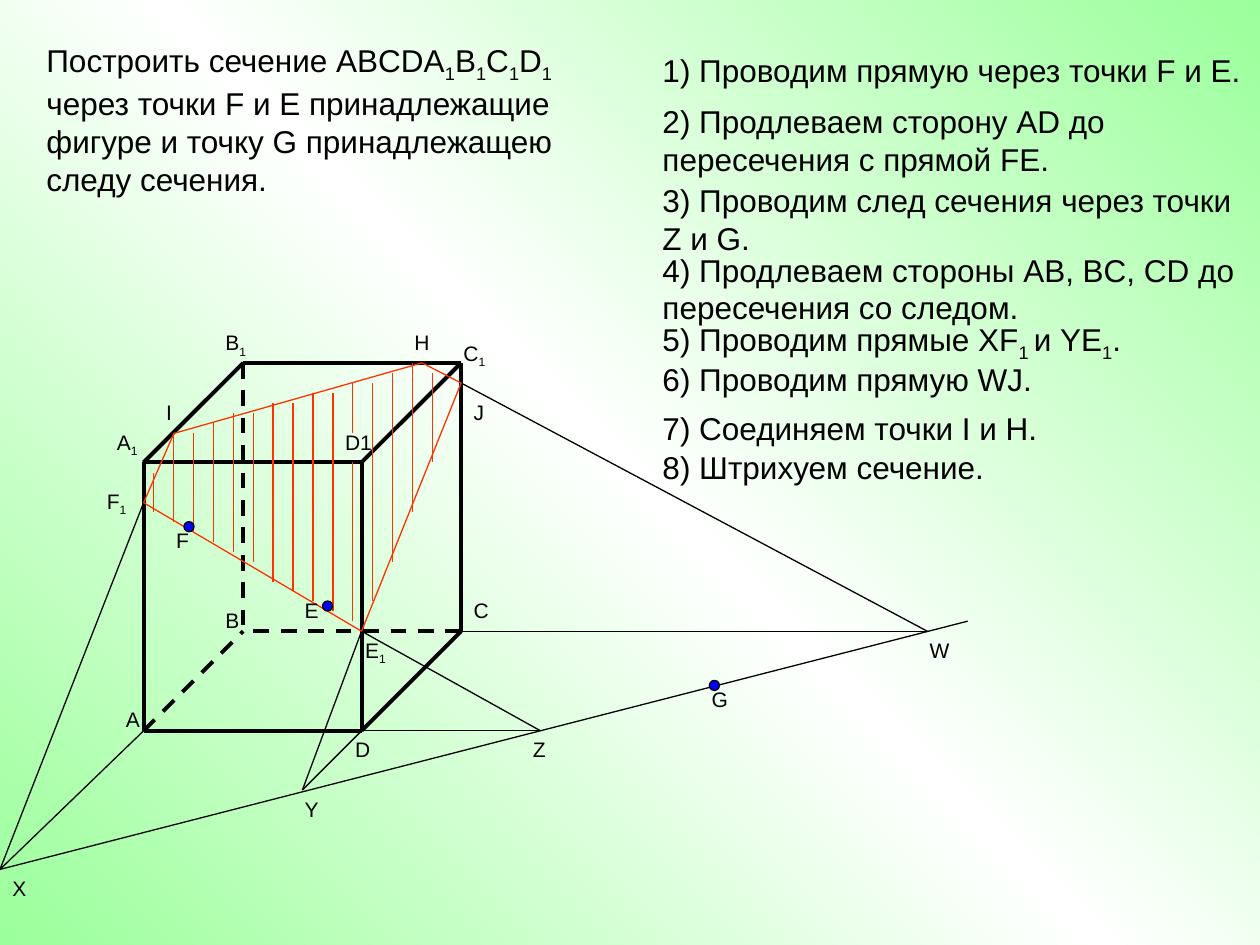
from copy import deepcopy
from dataclasses import dataclass
from typing import NamedTuple

from pptx import Presentation
from pptx.dml.color import RGBColor
from pptx.enum.dml import MSO_LINE
from pptx.enum.shapes import MSO_CONNECTOR, MSO_SHAPE
from pptx.enum.text import MSO_AUTO_SIZE
from pptx.oxml.ns import qn
from pptx.util import Inches, Pt
from lxml.etree import SubElement


@dataclass(frozen=True)
class Theme:
    font: str = "Arial"
    ink: str = "000000"
    section: str = "FF3300"
    dot: str = "0000FF"
    edge_stop: str = "9BFF9B"
    middle_stop: str = "FFFFFF"
    label_size: float = 12
    text_size: float = 18
    thick: float = 2.25
    thin: float = 0.75


class Point(NamedTuple):
    x: float
    y: float


class Pen(NamedTuple):
    color: str
    width: float
    dash: MSO_LINE | None = None


class TextBox(NamedTuple):
    text: str  # every second part between underscores is a subscript
    left: float
    top: float
    width: float
    height: float = 0.3


THEME = Theme()
SOLID = Pen(THEME.ink, THEME.thick)
HIDDEN = Pen(THEME.ink, THEME.thick, MSO_LINE.DASH)
THIN = Pen(THEME.ink, THEME.thin)
RED = Pen(THEME.section, THEME.thin)

POINTS = {
    # Cube vertices
    "A": Point(1.14, 5.8), "B": Point(1.93, 5.01),
    "C": Point(3.66, 5.01), "D": Point(2.87, 5.8),
    "A1": Point(1.14, 3.67), "B1": Point(1.93, 2.88),
    "C1": Point(3.66, 2.88), "D1": Point(2.87, 3.67),
    # Section vertices
    "F1": Point(1.14, 3.99), "E1": Point(2.87, 5.01), "J": Point(3.66, 3.04),
    "H": Point(3.35, 2.88), "I": Point(1.38, 3.44),
    # Points of the trace
    "X": Point(0, 6.9), "Y": Point(2.4, 6.27), "Z": Point(4.29, 5.8),
    "W": Point(7.36, 5.01), "trace end": Point(7.68, 4.93),
}

SEGMENTS = {
    SOLID: ["A A1", "D D1", "C C1", "D A", "D1 A1", "C1 B1", "A1 B1", "D C", "D1 C1"],
    HIDDEN: ["B1 B", "C B", "A B"],
    THIN: ["D Z", "D Y", "C W", "A X", "X F1", "Y E1", "W J", "E1 Z"],
    RED: ["F1 E1", "F1 I", "E1 J", "J H", "I H"],
}

DOTS = [Point(2.6, 4.81), Point(5.67, 5.44), Point(1.5, 4.18)]
DOT_SIZE = 0.08

# Top and bottom of each hatch line; None marks where the D1 label breaks it
HATCH_START, HATCH_STEP = 1.22, 0.158
HATCHES = [
    (3.75, 4.06), (3.44, 4.14), (3.44, 4.22), (3.36, 4.3), (3.28, 4.38),
    (3.28, 4.46), (3.2, 4.62), (3.2, 4.69), (3.12, 4.77), (3.12, 4.85),
    (3.04, 3.44, 3.67, 4.93), (3.04, 4.77), (2.96, 4.46), (2.88, 4.06), (2.96, 3.67),
]

LABELS = [
    TextBox("A", 0.9, 5.56, 0.32), TextBox("B", 1.69, 4.77, 0.31),
    TextBox("C", 3.66, 4.69, 0.31), TextBox("D", 2.72, 5.8, 0.31),
    TextBox("A_1", 0.83, 3.36, 0.47), TextBox("B_1", 1.69, 2.57, 0.55),
    TextBox("C_1", 3.58, 2.65, 0.47), TextBox("D1", 2.64, 3.36, 0.47),
    TextBox("F", 1.3, 4.14, 0.32), TextBox("E", 2.32, 4.69, 0.32),
    TextBox("G", 5.55, 5.4, 0.31), TextBox("F_1", 0.75, 3.83, 0.47),
    TextBox("X", 0, 6.9, 0.27), TextBox("Y", 2.32, 6.27, 0.31),
    TextBox("Z", 4.13, 5.8, 0.31), TextBox("E_1", 2.8, 5.01, 0.47),
    TextBox("H", 3.19, 2.57, 0.31), TextBox("W", 7.28, 5.01, 0.31),
    TextBox("J", 3.66, 3.12, 0.31), TextBox("I", 1.22, 3.12, 0.24),
]

TASK = TextBox(
    "Построить сечение ABCDA_1_B_1_C_1_D_1_ через точки F и E принадлежащие "
    "фигуре и точку G принадлежащею следу сечения.", 0.27, 0.28, 4.57, 1.3)

STEP_LEFT, STEP_WIDTH = 5.16, 4.84
STEPS = [
    (0.36, 0.4, "1) Проводим прямую через точки F и E."),
    (0.76, 0.7, "2) Продлеваем сторону AD до пересечения с прямой FE."),
    (1.39, 0.7, "3) Проводим след сечения через точки Z и G."),
    (1.94, 0.7, "4) Продлеваем стороны AB, BC, CD до пересечения со следом."),
    (2.49, 0.4, "5) Проводим прямые XF_1 _и YE_1_."),
    (2.81, 0.4, "6) Проводим прямую WJ."),
    (3.2, 0.4, "7) Соединяем точки I и H."),
    (3.51, 0.4, "8) Штрихуем сечение."),
]


def set_format(target, values: dict) -> None:
    for name, value in values.items():
        setattr(target, name, value)


def paint_background(slide) -> None:
    fill = slide.background.fill
    fill.gradient()
    fill.gradient_angle = 45
    stop_list = next(slide.element.iter(qn("a:gsLst")))
    stop_list.insert(1, deepcopy(stop_list[0]))
    colors = (THEME.edge_stop, THEME.middle_stop, THEME.edge_stop)
    for stop, position, color in zip(fill.gradient_stops, (0, 0.5, 1), colors):
        stop.position = position
        stop.color.rgb = RGBColor.from_string(color)


def add_line(slide, start: Point, end: Point, pen: Pen) -> None:
    line = slide.shapes.add_connector(
        MSO_CONNECTOR.STRAIGHT, *map(Inches, (*start, *end)))
    set_format(line.line, {"width": Pt(pen.width), "dash_style": pen.dash})
    line.line.color.rgb = RGBColor.from_string(pen.color)
    SubElement(line.element.spPr, qn("a:effectLst"))


def add_dot(slide, center: Point) -> None:
    corner = [value - DOT_SIZE / 2 for value in center]
    dot = slide.shapes.add_shape(
        MSO_SHAPE.OVAL, *map(Inches, (*corner, DOT_SIZE, DOT_SIZE)))
    dot.shadow.inherit = False
    dot.fill.solid()
    dot.fill.fore_color.rgb = RGBColor.from_string(THEME.dot)
    dot.line.color.rgb = RGBColor.from_string(THEME.ink)
    dot.line.width = Pt(THEME.thin)


def add_text(slide, box: TextBox, size: float) -> None:
    shape = slide.shapes.add_textbox(
        *map(Inches, (box.left, box.top, box.width, box.height)))
    set_format(shape.text_frame,
               {"word_wrap": True, "auto_size": MSO_AUTO_SIZE.SHAPE_TO_FIT_TEXT})
    paragraph = shape.text_frame.paragraphs[0]
    for index, part in enumerate(box.text.split("_")):
        if not part:
            continue
        run = paragraph.add_run()
        run.text = part
        set_format(run.font, {"name": THEME.font, "size": Pt(size)})
        run.font.color.rgb = RGBColor.from_string(THEME.ink)
        if index % 2:
            run.font._element.set("baseline", "-25000")


def main() -> None:
    presentation = Presentation()
    set_format(presentation, {"slide_width": Inches(10), "slide_height": Inches(7.5)})
    slide = presentation.slides.add_slide(presentation.slide_layouts[6])
    paint_background(slide)

    # Cube, construction lines and section outline
    for pen, segments in SEGMENTS.items():
        for segment in segments:
            start, end = segment.split()
            add_line(slide, POINTS[start], POINTS[end], pen)
    add_line(slide, POINTS["trace end"], POINTS["X"], THIN)

    # Hatching of the section
    for index, ends in enumerate(HATCHES):
        x = HATCH_START + index * HATCH_STEP
        for top, bottom in zip(ends[::2], ends[1::2]):
            add_line(slide, Point(x, top), Point(x, bottom), RED)

    # Given points and labels
    for center in DOTS:
        add_dot(slide, center)
    for label in LABELS:
        add_text(slide, label, THEME.label_size)

    # Task and solution steps
    add_text(slide, TASK, THEME.text_size)
    for top, height, text in STEPS:
        add_text(slide, TextBox(text, STEP_LEFT, top, STEP_WIDTH, height), THEME.text_size)

    presentation.save("out.pptx")


if __name__ == "__main__":
    main()
